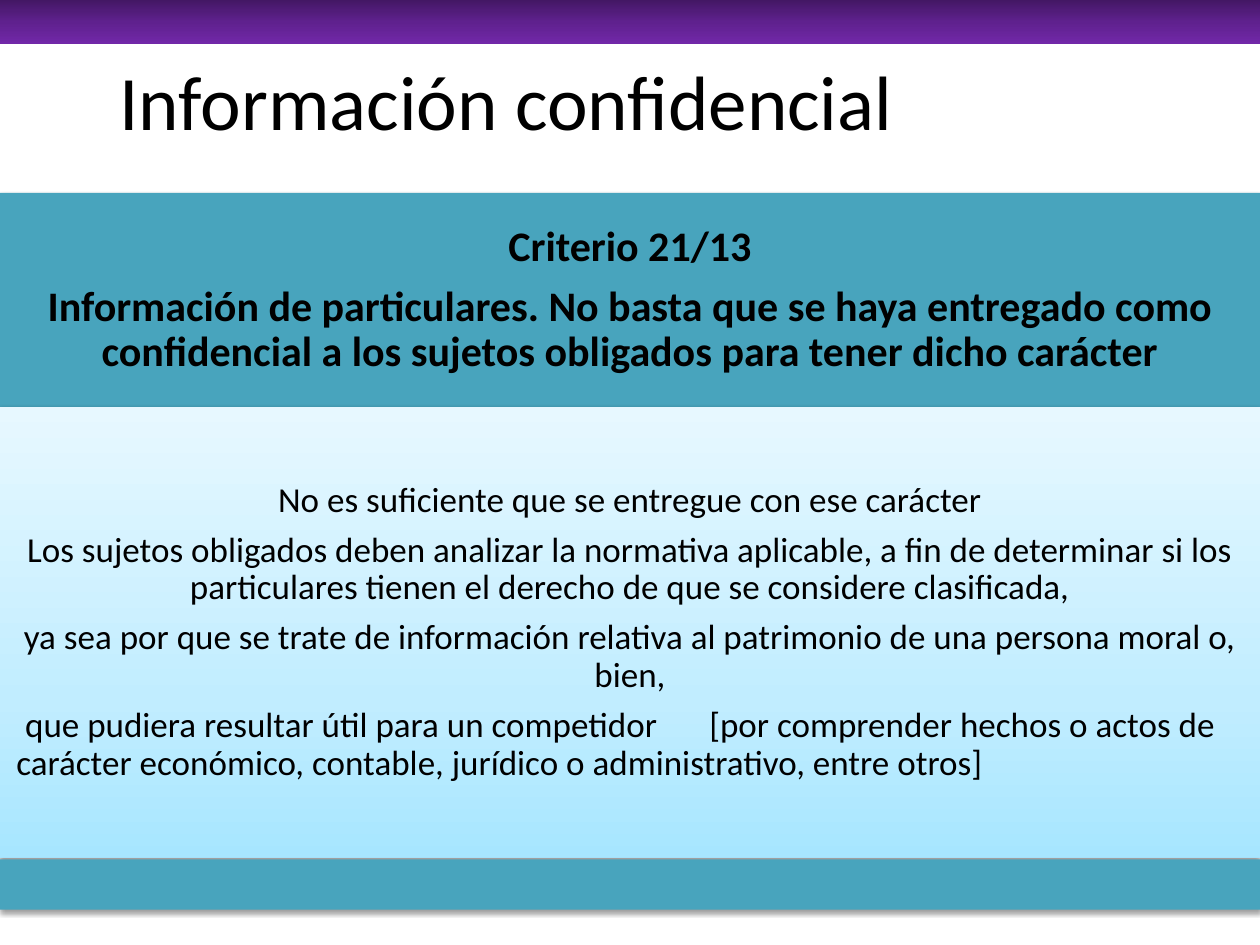
from copy import deepcopy

from lxml import etree
from pptx import Presentation
from pptx.dml.color import RGBColor
from pptx.enum.shapes import MSO_SHAPE
from pptx.enum.text import MSO_ANCHOR, PP_ALIGN
from pptx.oxml import parse_xml
from pptx.oxml.ns import nsdecls, qn
from pptx.util import Inches, Pt

RECTANGLE = MSO_SHAPE.RECTANGLE
MIDDLE = MSO_ANCHOR.MIDDLE
CENTER, LEFT = PP_ALIGN.CENTER, PP_ALIGN.LEFT

COLORS = {
    "text": "000000",
    "teal": "48A4BD",
    "purple": ["431764", "5F218E", "7128A8"],
    "sky": ["A7E6FF", "C1EDFF", "E7F8FF"],
}
SHADOW = (
    f'<a:effectLst {nsdecls("a")}><a:outerShdw blurRad="{Pt(3.1)}" dist="{Pt(1.6)}" '
    'dir="5400000" rotWithShape="0"><a:srgbClr val="000000"><a:alpha val="38000"/>'
    "</a:srgbClr></a:outerShdw></a:effectLst>"
)


def add_band(top, height, colors, middle_stop=0.5, angle=0):
    """Add a full-width band, solid for one colour or a gradient for three."""
    band = slide.shapes.add_shape(
        RECTANGLE, 0, Inches(top), presentation.slide_width, Inches(height))
    band.shadow.inherit = False
    band.line.fill.background()
    if isinstance(colors, str):
        band.fill.solid()
        band.fill.fore_color.rgb = RGBColor.from_string(colors)
        return band
    band.fill.gradient()
    band.fill.gradient_angle = angle
    first_stop = band._element.spPr.find(qn("a:gradFill")).find(qn("a:gsLst"))[0]
    first_stop.addnext(deepcopy(first_stop))
    for stop, position, color in zip(
            band.fill.gradient_stops, (0, middle_stop, 1), colors):
        stop.position = position
        stop.color.rgb = RGBColor.from_string(color)
    return band


def write_paragraphs(shape, texts, size, inset, bold=False):
    frame = shape.text_frame
    frame.word_wrap = True
    frame.vertical_anchor = MIDDLE
    frame.margin_left = frame.margin_right = Inches(inset)
    frame.margin_top = frame.margin_bottom = Inches(inset)
    for index, text in enumerate(texts):
        paragraph = frame.add_paragraph() if index else frame.paragraphs[0]
        paragraph.text = text
        paragraph.alignment = CENTER
        if "\t" in text:
            paragraph.alignment = LEFT
            properties = paragraph._p.get_or_add_pPr()
            properties.set("marL", str(Inches(0.05)))
            properties.set("indent", str(Inches(0.07)))
            tabs = etree.SubElement(properties, qn("a:tabLst"))
            etree.SubElement(tabs, qn("a:tab"), pos=str(Inches(7.78)), algn="l")
        if len(texts) > 1:
            paragraph.line_spacing = 0.9
            paragraph.space_after = Pt(size * 0.35)
        paragraph.font.size = Pt(size)
        paragraph.font.name = "Calibri"
        paragraph.font.bold = bold
        paragraph.font.color.rgb = RGBColor.from_string(COLORS["text"])


presentation = Presentation()
presentation.slide_width = Inches(10)
presentation.slide_height = Inches(7.5)
slide = presentation.slides.add_slide(presentation.slide_layouts[6])

add_band(0, 0.35, COLORS["purple"], angle=270)

title = slide.shapes.add_textbox(Inches(0.28), Inches(0.29), Inches(7.48), Inches(1))
write_paragraphs(title, ["Información confidencial"], 44, 0.1)

heading = add_band(1.53, 1.71, COLORS["teal"])
write_paragraphs(heading, [
    "Criterio 21/13",
    "Información de particulares. No basta que se haya entregado como confidencial "
    "a los sujetos obligados para tener dicho carácter",
], 24, 0.1, bold=True)

body = add_band(3.23, 3.58, COLORS["sky"], middle_stop=0.35, angle=90)
write_paragraphs(body, [
    "No es suficiente que se entregue con ese carácter",
    "Los sujetos obligados deben analizar la normativa aplicable, a fin de determinar "
    "si los particulares tienen el derecho de que se considere clasificada,",
    "ya sea por que se trate de información relativa al patrimonio de una persona "
    "moral o, bien,",
    "que pudiera resultar útil para un competidor\t[por comprender hechos o actos de "
    "carácter económico, contable, jurídico o administrativo, entre otros]",
], 20, 0.08)

footer = add_band(6.82, 0.4, COLORS["teal"])

for band in (heading, body, footer):
    properties = band._element.spPr
    properties.replace(properties.find(qn("a:effectLst")), parse_xml(SHADOW))

presentation.save("out.pptx")
